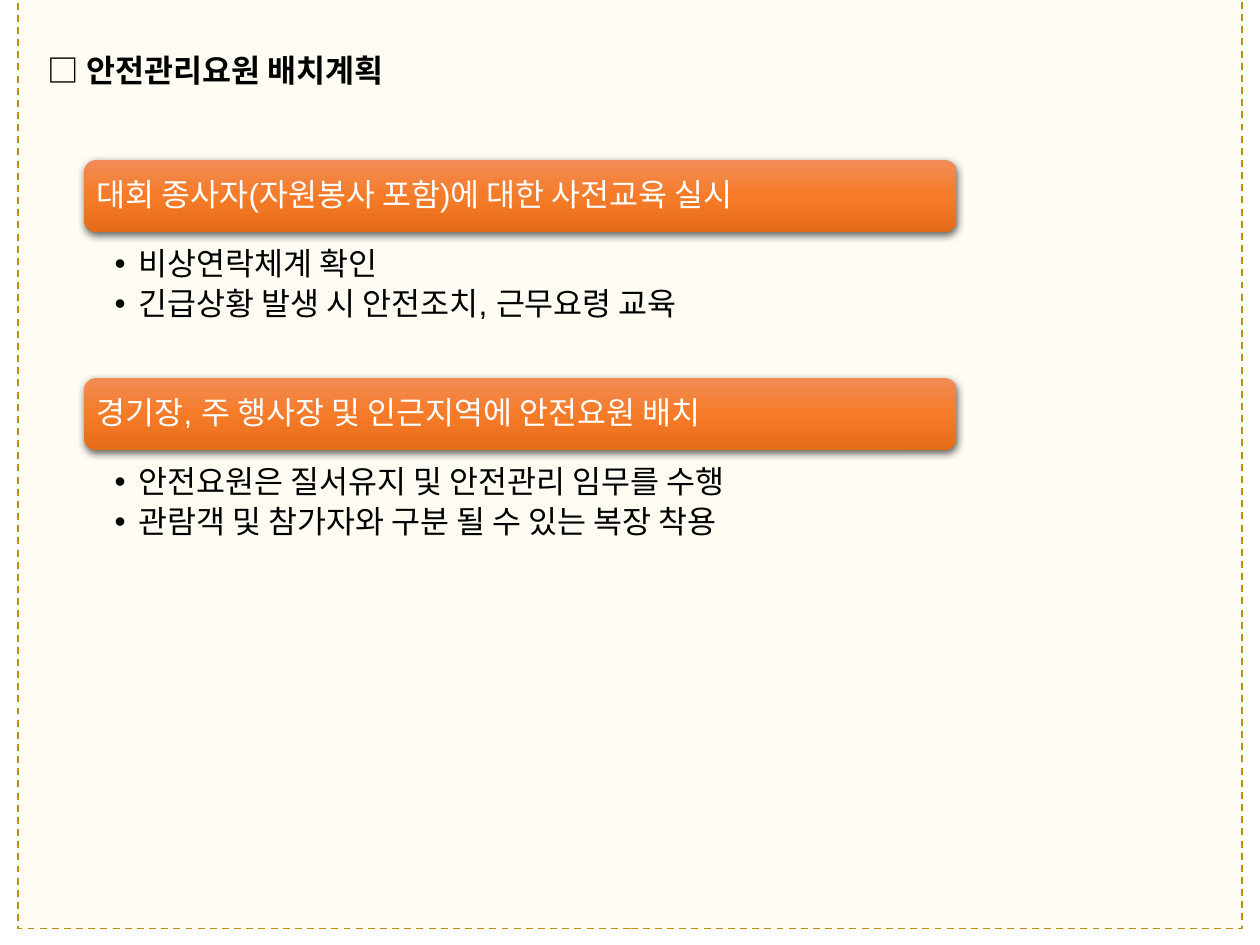
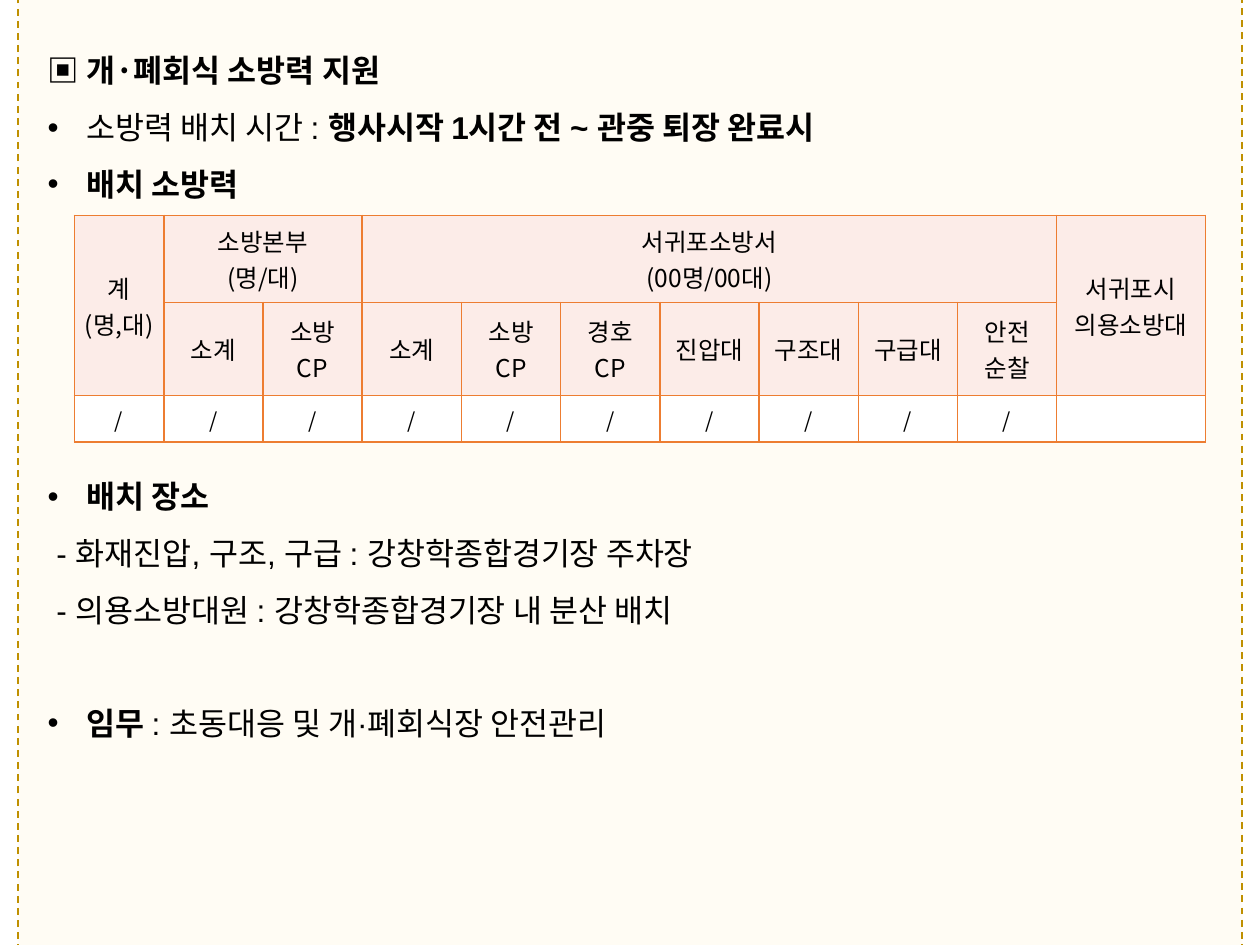
from lxml import etree
from pptx import Presentation
from pptx.dml.color import RGBColor
from pptx.enum.dml import MSO_LINE
from pptx.enum.shapes import MSO_SHAPE as SHAPE
from pptx.enum.text import MSO_ANCHOR as ANCHOR, MSO_AUTO_SIZE as AUTOSIZE, PP_ALIGN as ALIGN
from pptx.oxml.ns import qn
from pptx.util import Inches, Pt

KOREAN, LATIN = "Noto Sans CJK KR", "Arial"
BLACK, WHITE = "000000", "FFFFFF"
CREAM, GOLD = "FFF6DD", "BF9000"
ORANGE, PINK = "ED7D31", "FCECE8"
BAND_STOPS = [(0, "F18C57"), (50, "F67B28"), (100, "E56C19")]
HEADING = {"face": KOREAN, "bold": True}
BULLET = {"indent": 0.31, "hang": 0.31, "bullet": True, "line": 1.5}


def rgb(code):
    return RGBColor.from_string(code)


def add_xml(parent, tag, **attributes):
    return etree.SubElement(parent, qn(tag), {k: str(v) for k, v in attributes.items()})


def add_color(parent, code, alpha=None):
    color = add_xml(add_xml(parent, "a:solidFill") if alpha is None else parent,
                    "a:srgbClr", val=code)
    if alpha is not None:
        add_xml(color, "a:alpha", val=alpha * 1000)


# Text

def write_paragraph(paragraph, text, face=LATIN, size=18, color=BLACK, bold=None,
                    indent=0, hang=0, bullet=False, line=None, before=None,
                    after=None, align=None, tracking=None):
    """Text is a string, or a list of (words, bold) pairs."""
    if line:
        paragraph.line_spacing = line
    if before:
        paragraph.space_before = Pt(before)
    if after:
        paragraph.space_after = Pt(after)
    if align is not None:
        paragraph.alignment = align
    properties = paragraph._p.get_or_add_pPr()
    if indent:
        properties.set("marL", str(Inches(indent)))
        properties.set("indent", str(-Inches(hang)))
    if bullet:
        add_xml(properties, "a:buFont", typeface=LATIN)
        add_xml(properties, "a:buChar", char="•")
    font = paragraph.font
    font.size, font.bold, font.name = Pt(size), bold, face
    font.color.rgb = rgb(color)
    defaults = properties.find(qn("a:defRPr"))
    add_xml(defaults, "a:ea", typeface=KOREAN)
    if tracking:
        defaults.set("spc", str(int(tracking * 100)))
    for words, run_bold in [(text, None)] if isinstance(text, str) else text:
        run = paragraph.add_run()
        run.text = words
        if run_bold is not None:
            run.font.bold = run_bold


def write_frame(frame, paragraphs):
    for index, (text, style) in enumerate(paragraphs):
        paragraph = frame.add_paragraph() if index else frame.paragraphs[0]
        write_paragraph(paragraph, text, **style)


def set_margins(target, left, top, right, bottom):
    target.margin_left, target.margin_top = Inches(left), Inches(top)
    target.margin_right, target.margin_bottom = Inches(right), Inches(bottom)


def add_text(slide, box, paragraphs, margins=None, grow=True):
    frame = slide.shapes.add_textbox(*map(Inches, box)).text_frame
    frame.word_wrap = True
    if grow:
        frame.auto_size = AUTOSIZE.SHAPE_TO_FIT_TEXT
    if margins:
        set_margins(frame, *margins)
    write_frame(frame, paragraphs)


# Shared page frame

def add_page(deck, frame_height):
    slide = deck.slides.add_slide(deck.slide_layouts[6])
    page = slide.shapes.add_shape(
        SHAPE.RECTANGLE, *map(Inches, (0.14, -0.11, 9.72, frame_height)))
    page.shadow.inherit = False
    page.fill.solid()
    page.fill.fore_color.rgb = rgb(CREAM)
    cream = page._element.spPr.find(qn("a:solidFill")).find(qn("a:srgbClr"))
    add_xml(cream, "a:alpha", val=30000)
    page.line.color.rgb = rgb(GOLD)
    page.line.width = Pt(1)
    page.line.dash_style = MSO_LINE.DASH
    return slide


# Safety staff plan: an orange band with bullets under it

def style_band(band):
    band.line.fill.background()
    band.shadow.inherit = False
    properties = band._element.spPr
    gradient = etree.Element(qn("a:gradFill"), rotWithShape="1")
    stops = add_xml(gradient, "a:gsLst")
    for position, code in BAND_STOPS:
        add_xml(add_xml(stops, "a:gs", pos=position * 1000), "a:srgbClr", val=code)
    add_xml(gradient, "a:lin", ang=5400000, scaled=0)
    properties.find(qn("a:ln")).addprevious(gradient)
    shadow = add_xml(properties.find(qn("a:effectLst")), "a:outerShdw", blurRad=Pt(4.5),
                     dist=Pt(1.5), dir=5400000, algn="ctr", rotWithShape=0)
    add_color(shadow, BLACK, 63)


def add_measure(slide, left, top, headline, details):
    band = slide.shapes.add_shape(
        SHAPE.ROUNDED_RECTANGLE, *map(Inches, (left, top, 6.92, 0.57)))
    style_band(band)
    frame = band.text_frame
    frame.word_wrap = True
    frame.vertical_anchor = ANCHOR.MIDDLE
    set_margins(frame, 0.07, 0.07, 0.07, 0.07)
    write_frame(frame, [(headline, {"color": WHITE, "line": 0.9, "align": ALIGN.LEFT})])
    item = {"indent": 0.19, "hang": 0.19, "bullet": True, "line": 0.9, "after": 3.6}
    add_text(slide, (left - 0.04, top + 0.67, 8.74, 1.16),
             [(detail, item) for detail in details], (0.28, 0.03, 0.14, 0.03), grow=False)


def build_staff_plan(deck):
    slide = add_page(deck, 7.48)
    add_text(slide, (0.28, 0.36, 9.35, 0.4), [("□ 안전관리요원 배치계획", HEADING)])
    measures = [
        ("대회 종사자(자원봉사 포함)에 대한 사전교육 실시",
         ["비상연락체계 확인", "긴급상황 발생 시 안전조치, 근무요령 교육"]),
        ("경기장, 주 행사장 및 인근지역에 안전요원 배치",
         ["안전요원은 질서유지 및 안전관리 임무를 수행",
          "관람객 및 참가자와 구분 될 수 있는 복장 착용"]),
    ]
    for index, (headline, details) in enumerate(measures):
        add_measure(slide, 0.67, 1.27 + index * 1.73, headline, details)


# Fire service support: table of crews

def style_cell(cell, fill):
    cell.fill.solid()
    cell.fill.fore_color.rgb = rgb(fill)
    cell.vertical_anchor = ANCHOR.MIDDLE
    set_margins(cell, 0.07, 0.02, 0.07, 0.02)
    properties = cell._tc.get_or_add_tcPr()
    for index, side in enumerate(("a:lnL", "a:lnR", "a:lnT", "a:lnB")):
        border = etree.Element(qn(side), w=str(Pt(1)))
        add_color(border, ORANGE)
        properties.insert(index, border)


def add_crew_table(slide, left, top, width):
    first, last, crew_count = 0.71, 1.18, 9
    crew = (width - first - last) / crew_count
    columns = [first] + [crew] * crew_count + [last]
    rows = [0.69, 0.74, 0.37]
    table = slide.shapes.add_table(len(rows), len(columns), *map(
        Inches, (left, top, width, sum(rows)))).table
    for column, size in zip(table.columns, columns):
        column.width = Inches(size)
    for row, size in zip(table.rows, rows):
        row.height = Inches(size)
    for start, end in [((0, 0), (1, 0)), ((0, 1), (0, 2)),
                       ((0, 3), (0, 9)), ((0, 10), (1, 10))]:
        table.cell(*start).merge(table.cell(*end))

    groups = {0: "계\n(명,대)", 1: "소방본부\n(명/대)",
              3: "서귀포소방서\n(00명/00대)", 10: "서귀포시\n의용소방대"}
    crews = ["소계", "소방\nCP", "소계", "소방\nCP", "경호\nCP",
             "진압대", "구조대", "구급대", "안전\n순찰"]
    grid = [[groups.get(c, "") for c in range(len(columns))],
            ["", *crews, ""],
            ["/"] * (crew_count + 1) + [""]]
    for r, labels in enumerate(grid):
        is_header = r < 2
        for c, label in enumerate(labels):
            cell = table.cell(r, c)
            style_cell(cell, PINK if is_header else WHITE)
            style = {"face": KOREAN, "size": 14 if is_header else 12,
                     "align": ALIGN.CENTER, "tracking": -1.2 if r == c == 0 else None}
            write_frame(cell.text_frame, [(part, style) for part in label.split("\n")])


def build_fire_support(deck):
    slide = add_page(deck, 7.72)
    left, width = 0.28, 9.37
    bold_bullet = {**BULLET, "bold": True}
    place = {"indent": 0.07, "line": 1.5}
    add_text(slide, (left, 0.36, width, 1.3), [
        ("▣ 개·폐회식 소방력 지원", HEADING),
        ([("소방력 배치 시간 : ", False), ("행사시작 1시간 전 ~ 관중 퇴장 완료시", True)], BULLET),
        ("배치 소방력", bold_bullet),
    ])
    add_crew_table(slide, 0.59, 1.71, 8.98)
    add_text(slide, (left, 3.59, width, 2.37), [
        ("배치 장소", bold_bullet),
        ("- 화재진압, 구조, 구급 : 강창학종합경기장 주차장", place),
        ("- 의용소방대원 : 강창학종합경기장 내 분산 배치", place),
        ([("임무", True), (" : 초동대응 및 개·폐회식장 안전관리", False)],
         {**BULLET, "before": 32.3}),
    ])


def main():
    deck = Presentation()
    deck.slide_width, deck.slide_height = Inches(10), Inches(7.5)
    build_staff_plan(deck)
    build_fire_support(deck)
    deck.save("out.pptx")


if __name__ == "__main__":
    main()
